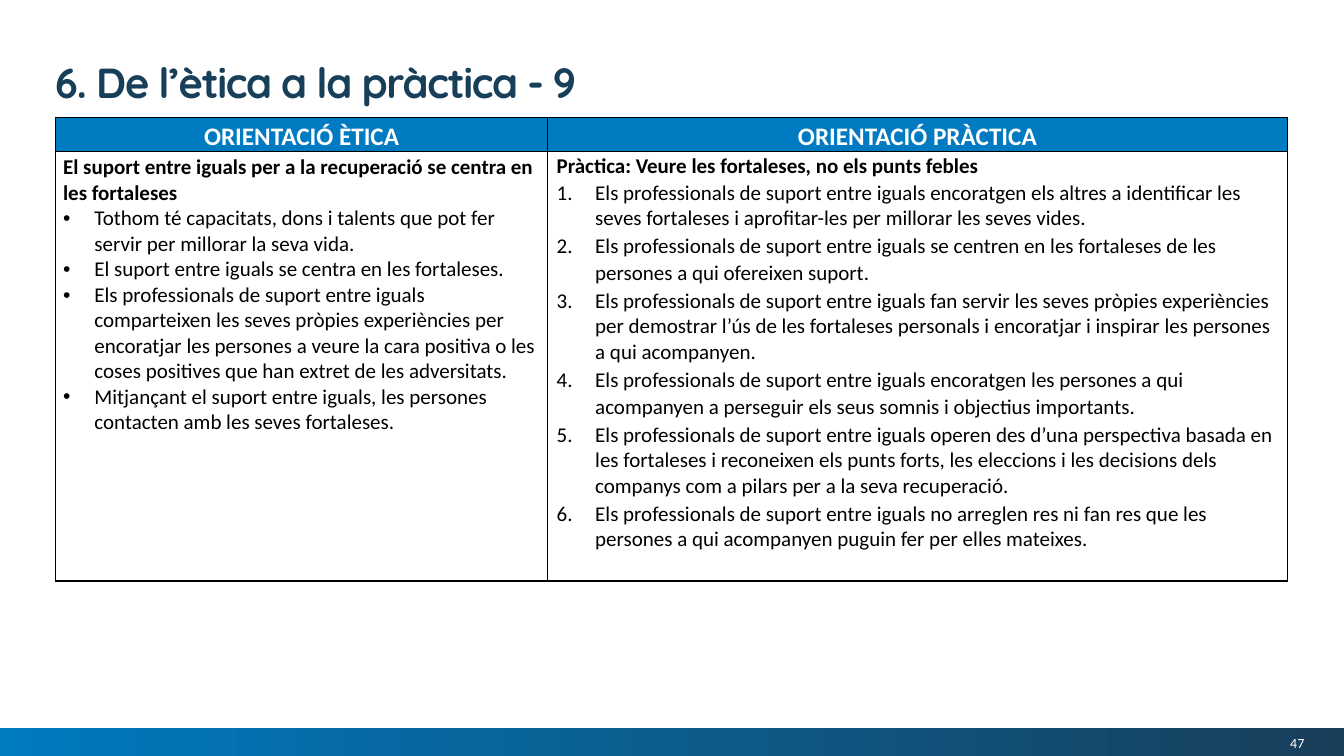
"""Build the slide that sets an ethical orientation beside its practical one."""
from dataclasses import dataclass

from lxml import etree
from pptx import Presentation
from pptx import util as u
from pptx.dml.color import RGBColor
from pptx.enum import shapes, text
from pptx.oxml.ns import qn


@dataclass(frozen=True)
class Theme:
    blue: RGBColor = RGBColor(0x00, 0x7A, 0xC0)
    navy: RGBColor = RGBColor(0x18, 0x3F, 0x5A)
    white: RGBColor = RGBColor(0xFF, 0xFF, 0xFF)
    black: RGBColor = RGBColor(0x00, 0x00, 0x00)
    title_font: str = "Quicksand"
    body_font: str = "Calibri"
    title_size: int = 30
    heading_size: int = 18
    body_size: int = 15
    number_size: int = 10


@dataclass(frozen=True)
class Item:
    wording: str
    spacing: float = 0.99
    after: float = 0


@dataclass(frozen=True)
class Orientation:
    heading: str
    lead: Item
    items: tuple[Item, ...]
    width: float
    side_inset: float
    top_inset: float
    indent: float
    numbered: bool


THEME = Theme()
ETHICAL = Orientation(
    "ORIENTACIÓ ÈTICA",
    Item("El suport entre iguals per a la recuperació se centra en les fortaleses"),
    (
        Item("Tothom té capacitats, dons i talents que pot fer servir per millorar la seva vida."),
        Item("El suport entre iguals se centra en les fortaleses."),
        Item("Els professionals de suport entre iguals comparteixen les seves pròpies experiències "
             "per encoratjar les persones a veure la cara positiva o les coses positives que han "
             "extret de les adversitats."),
        Item("Mitjançant el suport entre iguals, les persones contacten amb les seves fortaleses."),
    ),
    width=12.4, side_inset=0.19, top_inset=0.08, indent=0.79, numbered=False,
)
PRACTICAL = Orientation(
    "ORIENTACIÓ PRÀCTICA",
    Item("Pràctica: Veure les fortaleses, no els punts febles", 1.07, 0.6),
    (
        Item("Els professionals de suport entre iguals encoratgen els altres a identificar les "
             "seves fortaleses i aprofitar-les per millorar les seves vides.", 0.99, 1.6),
        Item("Els professionals de suport entre iguals se centren en les fortaleses de les "
             "persones a qui ofereixen suport.", 1.03, 1.6),
        Item("Els professionals de suport entre iguals fan servir les seves pròpies experiències "
             "per demostrar l’ús de les fortaleses personals i encoratjar i inspirar les persones "
             "a qui acompanyen.", 0.99, 1.7),
        Item("Els professionals de suport entre iguals encoratgen les persones a qui acompanyen "
             "a perseguir els seus somnis i objectius importants.", 1.03, 1.6),
        Item("Els professionals de suport entre iguals operen des d’una perspectiva basada en les "
             "fortaleses i reconeixen els punts forts, les eleccions i les decisions dels companys "
             "com a pilars per a la seva recuperació.", 0.99, 1.7),
        Item("Els professionals de suport entre iguals no arreglen res ni fan res que les persones "
             "a qui acompanyen puguin fer per elles mateixes."),
    ),
    width=18.64, side_inset=0.23, top_inset=0, indent=0.97, numbered=True,
)


def style(paragraph, face: str, size: float, colour: RGBColor, bold: bool = False) -> None:
    """Set the font of a whole paragraph."""
    font = paragraph.font
    font.name, font.size, font.bold = face, u.Pt(size), bold
    font.color.rgb = colour


def add_marker(paragraph, indent: float, numbered: bool) -> None:
    """Give a paragraph a hanging bullet or number."""
    properties = paragraph._p.get_or_add_pPr()
    properties.set("marL", str(u.Cm(indent)))
    properties.set("indent", str(-u.Cm(indent)))
    if numbered:
        etree.SubElement(properties, qn("a:buFont"), typeface="+mj-lt")
        etree.SubElement(properties, qn("a:buAutoNum"), type="arabicPeriod")
    else:
        etree.SubElement(properties, qn("a:buFont"), typeface="Arial")
        etree.SubElement(properties, qn("a:buChar"), char="•")


def format_cell(cell, fill: RGBColor, side: float, top: float) -> None:
    """Set the borders, fill and insets of a cell."""
    properties = cell._tc.get_or_add_tcPr()
    for edge in ("lnL", "lnR", "lnT", "lnB"):
        border = etree.SubElement(properties, qn(f"a:{edge}"), w=str(u.Pt(1)))
        ink = etree.SubElement(border, qn("a:solidFill"))
        etree.SubElement(ink, qn("a:srgbClr"), val=str(THEME.black))
    cell.fill.solid()
    cell.fill.fore_color.rgb = fill
    cell.margin_left = cell.margin_right = u.Cm(side)
    cell.margin_top, cell.margin_bottom = u.Cm(top), 0


def fill_column(table, index: int, orientation: Orientation) -> None:
    """Write one orientation into its table column."""
    table.columns[index].width = u.Cm(orientation.width)
    header, body = table.cell(0, index), table.cell(1, index)
    format_cell(header, THEME.blue, 0.2, 0)
    heading = header.text_frame.paragraphs[0]
    heading.text = orientation.heading
    heading.alignment = text.PP_ALIGN.CENTER
    heading.line_spacing = 1.13
    style(heading, THEME.body_font, THEME.heading_size, THEME.white, True)

    format_cell(body, THEME.white, orientation.side_inset, orientation.top_inset)
    for order, item in enumerate((orientation.lead, *orientation.items)):
        frame = body.text_frame
        paragraph = frame.add_paragraph() if order else frame.paragraphs[0]
        paragraph.text = item.wording
        paragraph.line_spacing = item.spacing
        paragraph.space_after = u.Pt(item.after)
        if order:
            add_marker(paragraph, orientation.indent, orientation.numbered)
        style(paragraph, THEME.body_font, THEME.body_size, THEME.black, not order)


def add_title(slide) -> None:
    """Add the slide title."""
    box = slide.shapes.add_textbox(u.Cm(1.14), u.Cm(1.4), u.Cm(27.2), u.Cm(1.19))
    box.text_frame.word_wrap = True
    title = box.text_frame.paragraphs[0]
    title.text = "6. De l’ètica a la pràctica - 9"
    title.line_spacing = u.Pt(33)
    style(title, THEME.title_font, THEME.title_size, THEME.navy, True)
    title.runs[0]._r.get_or_add_rPr().set("spc", "-100")


def add_footer(slide, width: int) -> None:
    """Add the gradient band and the page number."""
    band = slide.shapes.add_shape(
        shapes.MSO_SHAPE.RECTANGLE, 0, u.Cm(18.34), width, u.Cm(0.71))
    band.shadow.inherit = False
    band.line.fill.background()
    band.fill.gradient()
    band.fill.gradient_angle = 0
    for stop, colour in zip(band.fill.gradient_stops, (THEME.blue, THEME.navy)):
        stop.color.rgb = colour

    box = slide.shapes.add_textbox(u.Cm(28.3), u.Cm(18.42), u.Cm(4.57), u.Cm(0.61))
    frame = box.text_frame
    frame.word_wrap = True
    frame.vertical_anchor = text.MSO_ANCHOR.MIDDLE
    frame.margin_left = frame.margin_right = frame.margin_top = frame.margin_bottom = 0
    number = frame.paragraphs[0]
    number.text = "47"
    number.alignment = text.PP_ALIGN.RIGHT
    style(number, THEME.body_font, THEME.number_size, THEME.white)


def main() -> None:
    """Build and save the presentation."""
    presentation = Presentation()
    presentation.slide_width, presentation.slide_height = u.Cm(33.87), u.Cm(19.05)
    slide = presentation.slides.add_slide(presentation.slide_layouts[6])
    add_footer(slide, presentation.slide_width)
    add_title(slide)

    orientations = (ETHICAL, PRACTICAL)
    heights = (0.86, 10.82)
    table = slide.shapes.add_table(
        len(heights), len(orientations), u.Cm(1.4), u.Cm(2.96),
        u.Cm(sum(column.width for column in orientations)), u.Cm(sum(heights))).table
    table.first_row = table.horz_banding = False
    for row, height in zip(table.rows, heights):
        row.height = u.Cm(height)
    for index, orientation in enumerate(orientations):
        fill_column(table, index, orientation)
    presentation.save("out.pptx")


if __name__ == "__main__":
    main()
